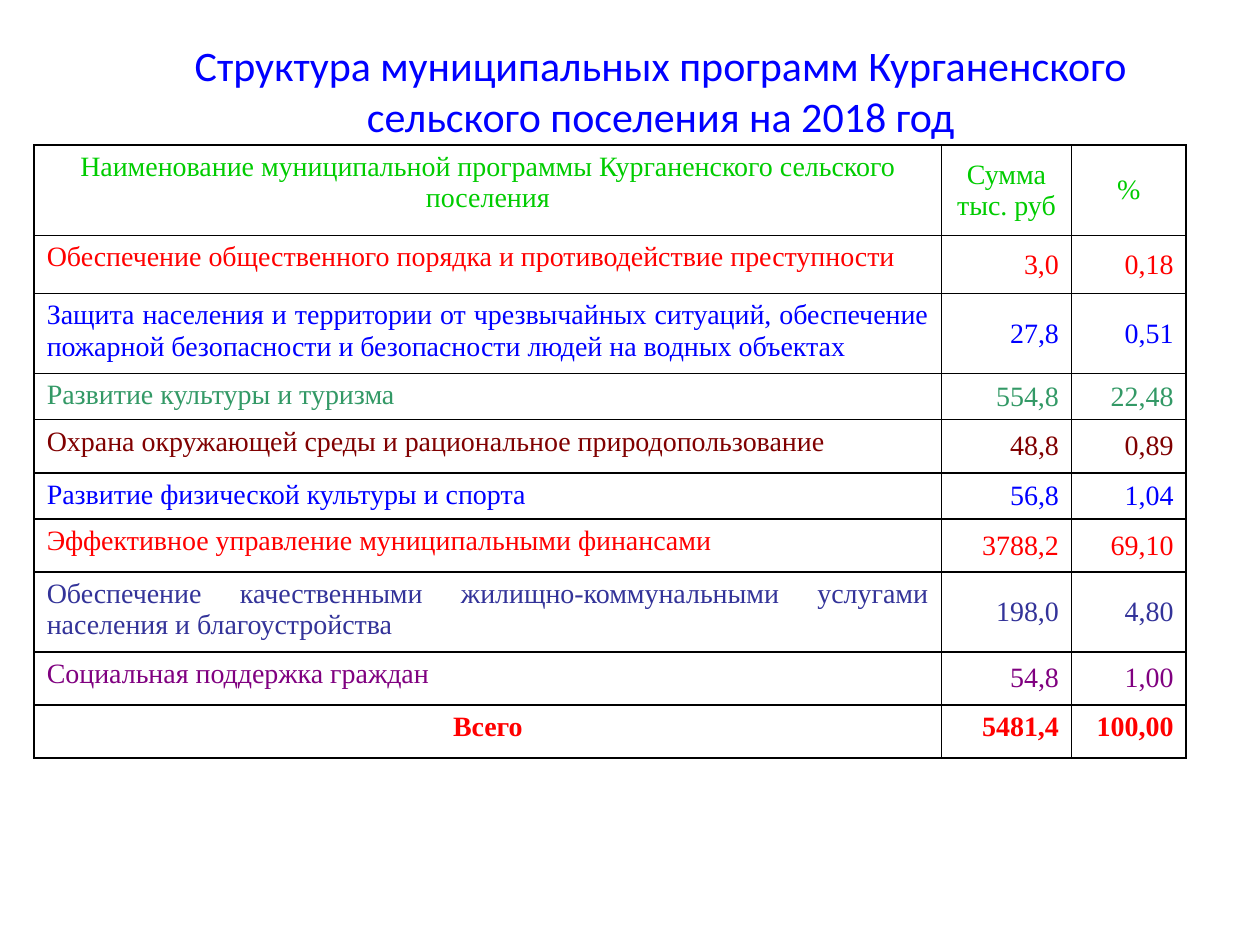
from dataclasses import dataclass

from lxml.etree import SubElement
from pptx import Presentation
from pptx.dml.color import RGBColor
from pptx.enum.text import MSO_ANCHOR, PP_ALIGN
from pptx.oxml.ns import qn
from pptx.util import Cm, Pt

BLACK = RGBColor(0x00, 0x00, 0x00)
BLUE = RGBColor(0x00, 0x00, 0xFF)
LIME = RGBColor(0x00, 0xCC, 0x00)
RED = RGBColor(0xFF, 0x00, 0x00)
GREEN = RGBColor(0x33, 0x99, 0x66)
MAROON = RGBColor(0x80, 0x00, 0x00)
INDIGO = RGBColor(0x33, 0x33, 0x99)
PURPLE = RGBColor(0x80, 0x00, 0x80)

COLUMN_WIDTHS = (18.29, 2.62, 2.31)


@dataclass
class Row:
    texts: tuple[str, str, str]
    color: RGBColor
    height: float
    name_align: PP_ALIGN = PP_ALIGN.JUSTIFY
    value_align: PP_ALIGN = PP_ALIGN.RIGHT
    value_anchor: MSO_ANCHOR = MSO_ANCHOR.MIDDLE
    bold: bool = False


ROWS = [
    Row(("Наименование муниципальной программы Курганенского сельского поселения",
         "Сумма тыс. руб", "%"), LIME, 1.83, PP_ALIGN.CENTER, PP_ALIGN.CENTER),
    Row(("Обеспечение общественного порядка и противодействие преступности",
         "3,0", "0,18"), RED, 1.17),
    Row(("Защита населения и территории от чрезвычайных ситуаций, обеспечение "
         "пожарной безопасности и безопасности людей на водных объектах",
         "27,8", "0,51"), BLUE, 1.4),
    Row(("Развитие культуры и туризма", "554,8", "22,48"), GREEN, 0.79),
    Row(("Охрана окружающей среды и рациональное природопользование",
         "48,8", "0,89"), MAROON, 1.07),
    Row(("Развитие физической культуры и спорта", "56,8", "1,04"), BLUE, 0.51),
    Row(("Эффективное управление муниципальными финансами",
         "3788,2", "69,10"), RED, 1.07),
    Row(("Обеспечение качественными жилищно-коммунальными услугами населения "
         "и благоустройства", "198,0", "4,80"), INDIGO, 1.47),
    Row(("Социальная поддержка граждан", "54,8", "1,00"), PURPLE, 1.07),
    Row(("Всего", "5481,4", "100,00"), RED, 1.07, PP_ALIGN.CENTER,
        value_anchor=MSO_ANCHOR.TOP, bold=True),
]


def format_text(tf, font: str, size: int, color: RGBColor, align: PP_ALIGN,
                bold: bool = False) -> None:
    for p in tf.paragraphs:
        p.alignment = align
        for r in p.runs:
            r.font.name = font
            r.font.size = Pt(size)
            r.font.bold = bold
            r.font.color.rgb = color


def add_borders(cell) -> None:
    tc_pr = cell._tc.get_or_add_tcPr()
    for i, side in enumerate(("lnL", "lnR", "lnT", "lnB")):
        ln = SubElement(tc_pr, qn(f"a:{side}"), w=str(Pt(1)))
        fill = SubElement(ln, qn("a:solidFill"))
        SubElement(fill, qn("a:srgbClr"), val=str(BLACK))
        # Borders come before the cell fill in the schema
        tc_pr.insert(i, ln)


def add_title(s, text: str) -> None:
    sp = s.shapes.add_textbox(Cm(2.54), Cm(0.71), Cm(21.56), Cm(2.21))
    tf = sp.text_frame
    tf.word_wrap = True
    tf.vertical_anchor = MSO_ANCHOR.MIDDLE
    tf.text = text
    format_text(tf, "Calibri", 24, BLUE, PP_ALIGN.CENTER)


def fill_cell(cell, row: Row, col: int) -> None:
    is_name = col == 0
    cell.fill.background()
    add_borders(cell)
    cell.vertical_anchor = MSO_ANCHOR.TOP if is_name else row.value_anchor
    cell.text_frame.text = row.texts[col]
    format_text(cell.text_frame, "Times New Roman", 16, row.color,
                row.name_align if is_name else row.value_align, row.bold)


def add_program_table(s, rows: list[Row]) -> None:
    table = s.shapes.add_table(
        len(rows), len(COLUMN_WIDTHS), Cm(0.69), Cm(2.92),
        Cm(sum(COLUMN_WIDTHS)), Cm(sum(row.height for row in rows))).table
    table.first_row = False
    table.horz_banding = False
    for column, width in zip(table.columns, COLUMN_WIDTHS):
        column.width = Cm(width)
    for i, row in enumerate(rows):
        table.rows[i].height = Cm(row.height)
        for col in range(len(COLUMN_WIDTHS)):
            fill_cell(table.cell(i, col), row, col)


def main() -> None:
    prs = Presentation()
    prs.slide_width, prs.slide_height = Cm(25.4), Cm(19.05)
    s = prs.slides.add_slide(prs.slide_layouts[6])

    # Heading
    add_title(s, "Структура муниципальных программ Курганенского "
                 "сельского поселения на 2018 год")

    # Programs with amounts and shares
    add_program_table(s, ROWS)

    prs.save("out.pptx")


if __name__ == "__main__":
    main()
